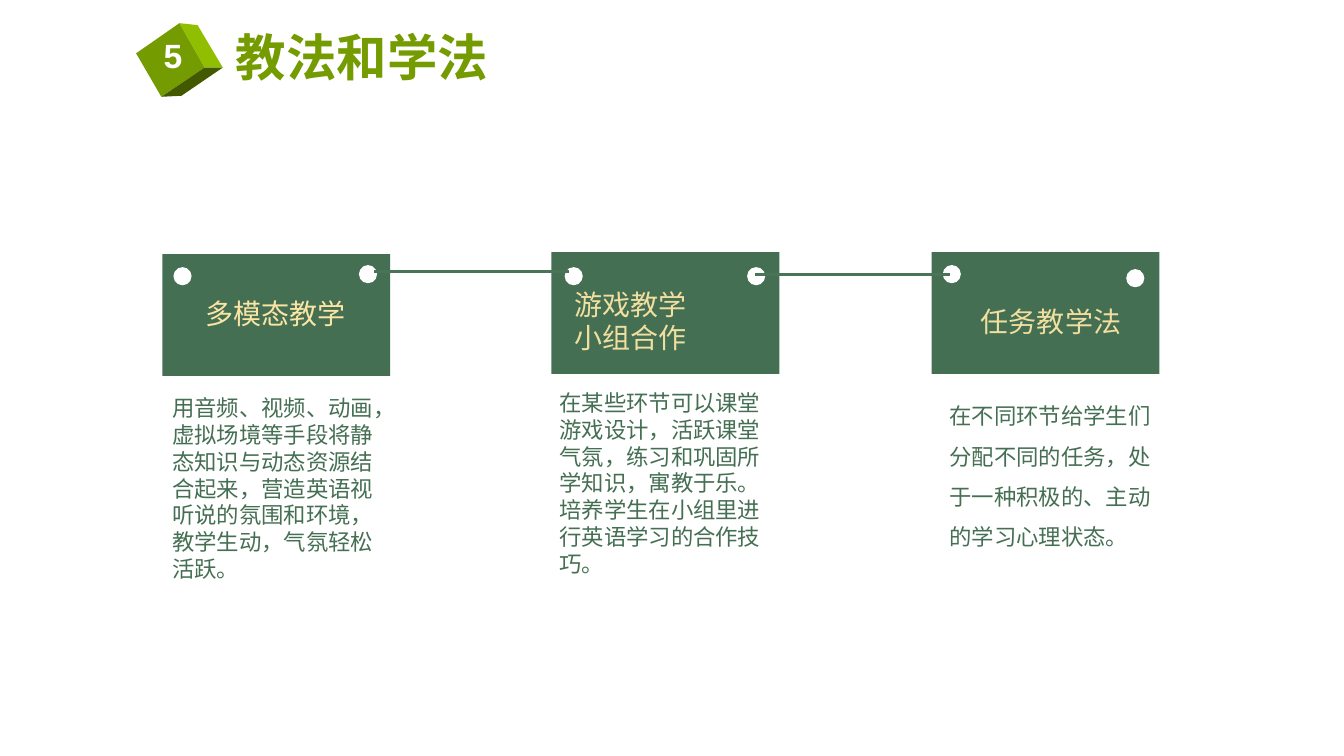
from lxml import etree
from pptx import Presentation
from pptx.dml.color import RGBColor
from pptx.enum.shapes import MSO_CONNECTOR, MSO_SHAPE
from pptx.enum.text import MSO_AUTO_SIZE, PP_ALIGN
from pptx.oxml.ns import qn
from pptx.util import Inches, Pt

RECTANGLE, OVAL = MSO_SHAPE.RECTANGLE, MSO_SHAPE.OVAL
STRAIGHT = MSO_CONNECTOR.STRAIGHT
LEFT, CENTER, JUSTIFY = PP_ALIGN.LEFT, PP_ALIGN.CENTER, PP_ALIGN.JUSTIFY
FIT_SHAPE = MSO_AUTO_SIZE.SHAPE_TO_FIT_TEXT

GREEN, LINE_GREEN, TITLE_GREEN = "456F53", "497458", "749B00"
WHITE, CREAM, SAND = "FFFFFF", "FBE5A4", "F1DFA0"
CARD_WIDTH, CARD_HEIGHT, PIN_SIZE = 2.26, 1.21, 0.18
BODY_WIDTH = 2.31

# Card corner, pin corners, heading box and colour, body box and line spacing
CARDS = [
    {"corner": (1.61, 2.52), "pins": [(1.72, 2.65), (3.56, 2.63)],
     "heading": ["多模态教学"], "heading_box": (1.94, 2.89, 1.6, 0.44),
     "heading_color": CREAM, "body_box": (1.61, 3.86, BODY_WIDTH, 1.99),
     "spacing": 1.0,
     "body": "用音频、视频、动画，虚拟场境等手段将静态知识与动态资源结合起来，"
             "营造英语视听说的氛围和环境，教学生动，气氛轻松活跃。"},
    {"corner": (5.47, 2.5), "pins": [(5.6, 2.65), (7.41, 2.65)],
     "heading": ["游戏教学", "小组合作"], "heading_box": (5.6, 2.8, 1.96, 0.77),
     "heading_color": SAND, "body_box": (5.45, 3.81, BODY_WIDTH, 1.99),
     "spacing": 1.0,
     "body": "在某些环节可以课堂游戏设计，活跃课堂气氛，练习和巩固所学知识，"
             "寓教于乐。培养学生在小组里进行英语学习的合作技巧。"},
    {"corner": (9.24, 2.5), "pins": [(9.35, 2.63), (11.17, 2.67)],
     "heading": ["任务教学法"], "heading_box": (9.63, 2.97, 1.72, 0.44),
     "heading_color": SAND, "body_box": (9.32, 3.81, BODY_WIDTH, 1.68),
     "spacing": 1.5,
     "body": "在不同环节给学生们分配不同的任务，处于一种积极的、主动的学习心理状态。"},
]
LINKS = [(3.71, 5.64, 2.69), (7.49, 9.42, 2.72)]

# Faces of the number cube: colour and corners
CUBE_FACES = [
    ("749B00", [(1.35, 0.53), (1.78, 0.23), (2.03, 0.67), (1.6, 0.96)]),
    ("8FBF00", [(1.78, 0.23), (1.96, 0.25), (2.21, 0.67), (2.03, 0.67)]),
    ("435900", [(1.6, 0.96), (2.03, 0.67), (2.21, 0.67), (1.8, 0.95)]),
]


def color(value):
    return RGBColor.from_string(value)


def paint(shape, fill):
    shape.shadow.inherit = False
    shape.fill.solid()
    shape.fill.fore_color.rgb = color(fill)
    shape.line.fill.background()


def add_block(slide, kind, box, fill):
    paint(slide.shapes.add_shape(kind, *map(Inches, box)), fill)


def add_face(slide, fill, corners):
    points = [(Inches(x), Inches(y)) for x, y in corners]
    builder = slide.shapes.build_freeform(*points[0])
    builder.add_line_segments(points[1:], close=True)
    paint(builder.convert_to_shape(), fill)


def add_link(slide, start, end, height):
    link = slide.shapes.add_connector(
        STRAIGHT, Inches(start), Inches(height), Inches(end), Inches(height))
    link.line.color.rgb = color(LINE_GREEN)
    link.line.width = Pt(2)
    etree.SubElement(link._element.spPr, qn("a:effectLst"))


def add_text(slide, box, lines, size, text_color, bold=False,
             alignment=LEFT, spacing=1.0):
    frame = slide.shapes.add_textbox(*map(Inches, box)).text_frame
    frame.word_wrap = True
    frame.auto_size = FIT_SHAPE
    font_format = {"name": "Arial", "size": Pt(size), "bold": bold}
    for index, line in enumerate(lines):
        paragraph = frame.paragraphs[0] if index == 0 else frame.add_paragraph()
        paragraph.alignment = alignment
        paragraph.line_spacing = spacing
        run = paragraph.add_run()
        run.text = line
        for name, value in font_format.items():
            setattr(run.font, name, value)
        run.font.color.rgb = color(text_color)


def add_card(slide, card):
    add_block(slide, RECTANGLE, (*card["corner"], CARD_WIDTH, CARD_HEIGHT), GREEN)
    add_text(slide, card["heading_box"], card["heading"], 20,
             card["heading_color"], alignment=JUSTIFY)
    add_text(slide, card["body_box"], [card["body"]], 16, GREEN,
             spacing=card["spacing"])
    for pin in card["pins"]:
        add_block(slide, OVAL, (*pin, PIN_SIZE, PIN_SIZE), WHITE)


def main():
    presentation = Presentation()
    presentation.slide_width = Inches(13.33)
    presentation.slide_height = Inches(7.5)
    slide = presentation.slides.add_slide(presentation.slide_layouts[6])

    # Cards and the lines that join them
    for card in CARDS:
        add_card(slide, card)
    for link in LINKS:
        add_link(slide, *link)

    # Numbered cube and title
    for fill, corners in CUBE_FACES:
        add_face(slide, fill, corners)
    add_text(slide, (1.44, 0.3, 0.55, 0.5), ["5"], 24, WHITE, True, CENTER)
    add_text(slide, (2.24, 0.21, 2.85, 0.71), ["教法和学法"], 36, TITLE_GREEN, True)

    presentation.save("out.pptx")


if __name__ == "__main__":
    main()
